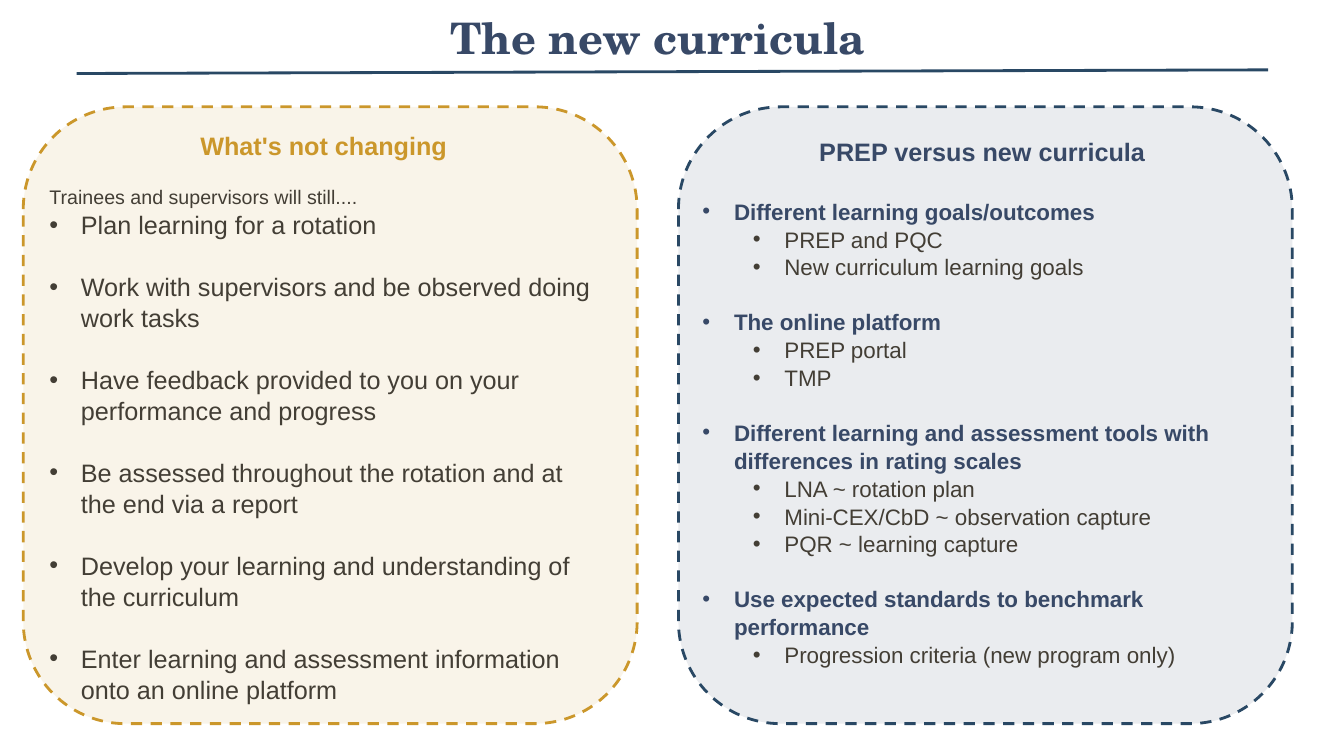
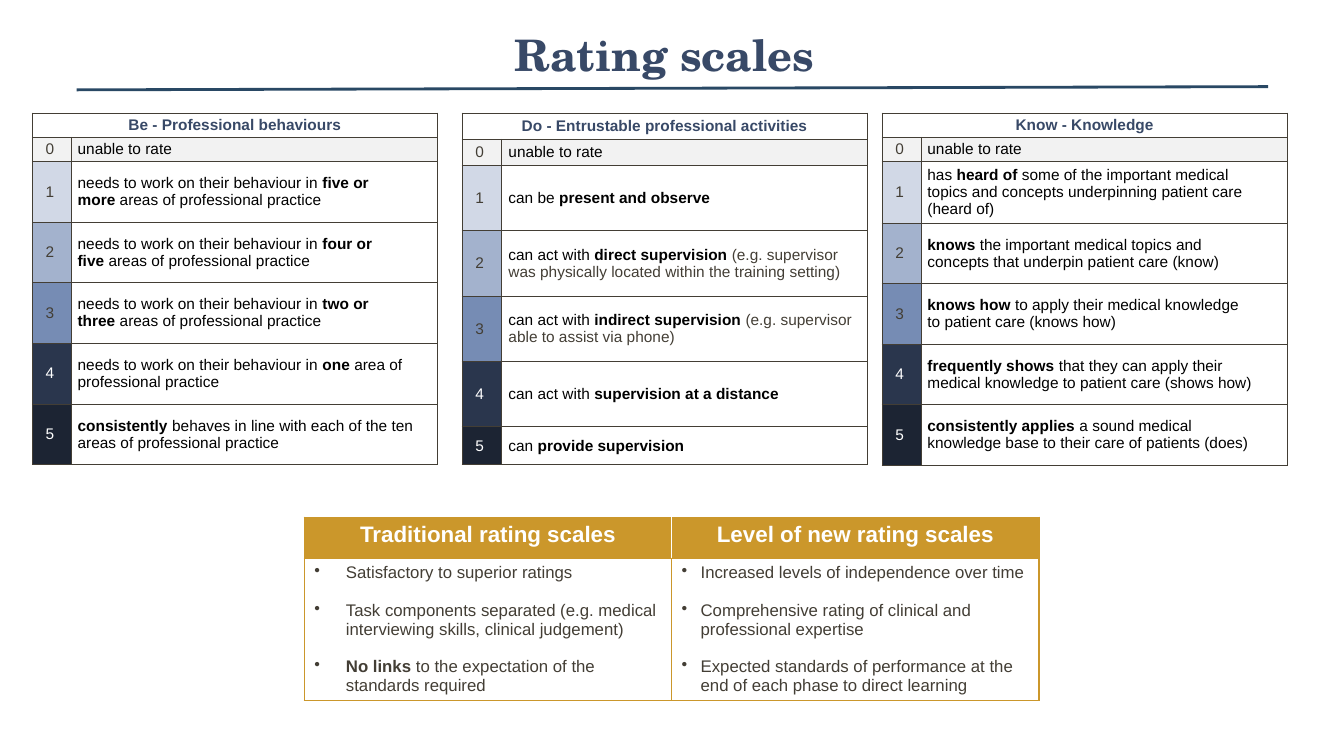
from dataclasses import dataclass

from lxml import etree
from pptx import Presentation
from pptx.dml.color import RGBColor
from pptx.enum import dml, shapes, text
from pptx.oxml import ns
from pptx.util import Pt


@dataclass(frozen=True)
class Theme:
    navy: str = "384967"
    rule: str = "294864"
    gold: str = "CB972B"
    ink: str = "433E35"
    black: str = "000000"
    white: str = "FFFFFF"
    scale: tuple = ("F2F2F2", "D1D8E6", "A3B2CD", "768CB4", "2A364D", "1C2433")
    title_font: str = "TeX Gyre Schola"
    body_font: str = "Arial"
    title: int = 31
    large: int = 18
    medium: int = 16
    intro: int = 14
    small: int = 12
    rating: int = 11


THEME = Theme()
INDENT = 22.5

CURRICULA_TITLE = dict(text="The new curricula", box=(38, 0, 864, 52.56), rule=(52.5, 49.9))
RATINGS_TITLE = dict(text="Rating scales", box=(150.5, 5, 648, 67.7), rule=(64.2, 61.9))

PANELS = [
    dict(left=16.6, fill=THEME.gold, line=THEME.gold, box=(28.1, 88.6, 416.2, 411.8), shift=10,
         content=[
             ("heading", "What's not changing"),
             ("intro", "Trainees and supervisors will still...."),
             ("point", "Plan learning for a rotation"),
             ("point", "Work with supervisors and be observed doing work tasks"),
             ("point", "Have feedback provided to you on your performance and progress"),
             ("point", "Be assessed throughout the rotation and at the end via a report"),
             ("point", "Develop your learning and understanding of the curriculum"),
             ("point", "Enter learning and assessment information onto an online platform"),
         ]),
    dict(left=484.6, fill=THEME.navy, line=THEME.rule, box=(494.6, 92.9, 419, 402.5), shift=5,
         content=[
             ("heading", "PREP versus new curricula"),
             ("topic", "Different learning goals/outcomes"),
             ("detail", "PREP and PQC"),
             ("detail", "New curriculum learning goals"),
             ("topic", "The online platform"),
             ("detail", "PREP portal"),
             ("detail", "TMP"),
             ("topic", "Different learning and assessment tools with differences in rating scales"),
             ("detail", "LNA ~ rotation plan"),
             ("detail", "Mini-CEX/CbD ~ observation capture"),
             ("detail", "PQR ~ learning capture"),
             ("topic", "Use expected standards to benchmark performance"),
             ("detail", "Progression criteria (new program only)"),
         ]),
]

STYLES = {
    "heading": dict(size=THEME.large, color=None, bold=True, gap=0, margin=None),
    "intro": dict(size=THEME.intro, color=THEME.ink, bold=False, gap=14.4, margin=None),
    "point": dict(size=THEME.large, color=THEME.ink, bold=False, gap=21.5, margin=INDENT),
    "topic": dict(size=THEME.medium, color=THEME.navy, bold=True, gap=19.1, margin=INDENT),
    "detail": dict(size=THEME.medium, color=THEME.ink, bold=False, gap=0, margin=36 + INDENT),
}

# ** marks bold, _ a space that does not break, | the start of muted text
RATINGS = [
    dict(left=23, heading="Be - Professional behaviours", inset=(4.3, 2.1),
         rows=[17.3, 17.3] + [43.3] * 5,
         levels=[
             "unable to rate",
             "needs to work on their behaviour in **five_or more_**areas of professional practice",
             "needs to work on their behaviour in **four_or five_**areas of professional practice",
             "needs to work on their behaviour in **two_or three_**areas of professional practice",
             "needs to work on their behaviour in **one **area of professional practice",
             "**consistently **behaves in line with each of_the ten areas of professional practice",
         ]),
    dict(left=330, heading="Do - Entrustable professional activities", inset=(5, 2.9),
         rows=[18.7, 18.7] + [46.7] * 4 + [26.9],
         levels=[
             "unable to rate",
             "can be **present and observe**",
             "can act with **direct supervision **|(e.g. supervisor was physically located "
             "within the training setting)",
             "can act with **indirect supervision **|(e.g. supervisor able to assist via phone)",
             "can act with **supervision at a distance**",
             "can **provide supervision**",
         ]),
    dict(left=630, heading="Know - Knowledge", inset=(4.3, 2.1),
         rows=[17.3, 17.3, 44] + [43.2] * 4,
         levels=[
             "unable to rate",
             "has **heard of **some of the important medical topics_and concepts "
             "underpinning patient care (heard of)",
             "**knows **the important medical topics and concepts_that underpin patient care (know)",
             "**knows how **to apply their medical knowledge to_patient care (knows how)",
             "**frequently shows** that they can apply their medical_knowledge "
             "to patient care (shows how)",
             "**consistently applies** a sound medical knowledge_base to their care of patients (does)",
         ]),
]

COMPARISON = [
    ("Traditional rating scales", INDENT, [
        "Satisfactory to superior ratings",
        "Task components separated (e.g. medical interviewing skills, clinical judgement)",
        "**No links **to the expectation of the standards required",
    ]),
    ("Level of new rating scales", 13.5, [
        "Increased levels of independence over time",
        "Comprehensive rating of clinical and professional expertise",
        "Expected standards of performance at the end of each phase to direct learning",
    ]),
]


def rgb(color):
    return RGBColor.from_string(color)


def place(shape, box):
    shape.left, shape.top, shape.width, shape.height = map(Pt, box)


def format_run(run, size, color, bold=False, font=THEME.body_font):
    run.font.name, run.font.size, run.font.bold = font, Pt(size), bold
    run.font.color.rgb = rgb(color)


def add_marked_text(paragraph, marked, size, color, muted=THEME.ink):
    main, _, aside = marked.replace("_", chr(160)).partition("|")
    pieces = [(piece, color, i % 2 == 1) for i, piece in enumerate(main.split("**"))]
    for piece, shade, bold in pieces + [(aside, muted, False)]:
        if piece:
            run = paragraph.add_run()
            run.text = piece
            format_run(run, size, shade, bold)


def set_bullet(paragraph, margin, hanging=INDENT):
    properties = paragraph._p.get_or_add_pPr()
    properties.set("marL", str(Pt(margin or 0)))
    properties.set("indent", str(-Pt(hanging) if margin else 0))
    bullet = etree.SubElement(properties, ns.qn("a:buChar" if margin else "a:buNone"))
    if margin:
        bullet.set("char", "•")


def next_paragraph(frame, index):
    return frame.paragraphs[0] if index == 0 else frame.add_paragraph()


def add_title(slide, title):
    shape = slide.shapes.title
    place(shape, title["box"])
    frame = shape.text_frame
    frame.text = title["text"]
    frame.vertical_anchor = text.MSO_ANCHOR.MIDDLE
    frame.auto_size = text.MSO_AUTO_SIZE.NONE
    frame.paragraphs[0].alignment = text.PP_ALIGN.CENTER
    format_run(frame.paragraphs[0].runs[0], THEME.title, THEME.navy, True, THEME.title_font)
    start, end = title["rule"]
    rule = slide.shapes.add_connector(
        shapes.MSO_CONNECTOR.STRAIGHT, Pt(54.7), Pt(start), Pt(905.8), Pt(end))
    rule.line.color.rgb, rule.line.width = rgb(THEME.rule), Pt(2)
    etree.SubElement(rule.element.spPr, ns.qn("a:effectLst"))


def add_panel(slide, panel, body):
    outline = slide.shapes.add_shape(shapes.MSO_SHAPE.ROUNDED_RECTANGLE, 0, 0, 0, 0)
    place(outline, (panel["left"], 76.3, 438.5, 440.6))
    outline.shadow.inherit = False
    outline.fill.solid()
    outline.fill.fore_color.rgb = rgb(panel["fill"])
    fill_color = outline.element.spPr.find(ns.qn("a:solidFill"))[0]
    etree.SubElement(fill_color, ns.qn("a:alpha")).set("val", "10000")
    outline.line.color.rgb, outline.line.width = rgb(panel["line"]), Pt(2)
    outline.line.dash_style = dml.MSO_LINE.DASH
    outline.element.getparent().insert(2, outline.element)

    place(body, panel["box"])
    frame = body.text_frame
    frame.auto_size = text.MSO_AUTO_SIZE.NONE
    previous = None
    for index, (kind, words) in enumerate(panel["content"]):
        style = STYLES[kind]
        paragraph = next_paragraph(frame, index)
        paragraph.text = words
        paragraph.level = 1 if kind == "detail" else 0
        set_bullet(paragraph, style["margin"])
        paragraph.line_spacing = 1.04
        paragraph.space_before = Pt(0 if previous == "intro" else style["gap"])
        paragraph.space_after = Pt(2.4 if kind == "heading" else 0)
        paragraph.alignment = text.PP_ALIGN.LEFT
        if kind == "heading":
            paragraph.alignment = text.PP_ALIGN.CENTER
            paragraph._p.get_or_add_pPr().set("marR", str(Pt(panel["shift"])))
        format_run(paragraph.runs[0], style["size"], style["color"] or panel["fill"], style["bold"])
        previous = kind


def style_cell(cell, fill, border, width, **edges):
    cell.fill.solid()
    cell.fill.fore_color.rgb = rgb(fill)
    properties = cell._tc.get_or_add_tcPr()
    for position, side in enumerate("LRTB"):
        line = etree.Element(ns.qn(f"a:ln{side}"), w=str(Pt(width)))
        solid = etree.SubElement(line, ns.qn("a:solidFill"))
        etree.SubElement(solid, ns.qn("a:srgbClr"), val=edges.get(side, border))
        properties.insert(position, line)


def add_grid(slide, left, top, columns, rows):
    frame = slide.shapes.add_table(
        len(rows), len(columns), Pt(left), Pt(top), Pt(sum(columns)), Pt(sum(rows)))
    table = frame.table
    table.first_row = table.horz_banding = False
    for column, width in zip(table.columns, columns):
        column.width = Pt(width)
    for row, height in zip(table.rows, rows):
        row.height = Pt(height)
    return table


def fill_heading(cell, words, size, color):
    cell.text_frame.text = words
    paragraph = cell.text_frame.paragraphs[0]
    paragraph.alignment = text.PP_ALIGN.CENTER
    format_run(paragraph.runs[0], size, color, True)


def add_rating_table(slide, rating):
    table = add_grid(slide, rating["left"], 80.8, (28.2, 261.4), rating["rows"])
    across, down = map(Pt, rating["inset"])
    for cell in table.iter_cells():
        style_cell(cell, THEME.white, THEME.ink, 0.61)
        cell.margin_left = cell.margin_right = across
        cell.margin_top = cell.margin_bottom = down
        cell.vertical_anchor = text.MSO_ANCHOR.MIDDLE
    table.cell(0, 0).merge(table.cell(0, 1))
    fill_heading(table.cell(0, 0), rating["heading"], THEME.rating, THEME.navy)
    for level, (words, shade) in enumerate(zip(rating["levels"], THEME.scale)):
        number, description = table.cell(level + 1, 0), table.cell(level + 1, 1)
        number.fill.fore_color.rgb = rgb(shade)
        number.margin_right = across + Pt(3)
        number.text_frame.text = str(level)
        paragraph = number.text_frame.paragraphs[0]
        paragraph.alignment = text.PP_ALIGN.CENTER
        format_run(paragraph.runs[0], THEME.rating, THEME.white if level > 3 else THEME.ink)
        if level == 0:
            description.fill.fore_color.rgb = rgb(shade)
        add_marked_text(description.text_frame.paragraphs[0], words, THEME.rating, THEME.black)


def add_comparison_table(slide):
    table = add_grid(slide, 217.4, 369.4, (262.4, 262.4), (29.3, 101.8))
    for column, (heading, margin, points) in enumerate(COMPARISON):
        header, body = table.cell(0, column), table.cell(1, column)
        inner = "R" if column == 0 else "L"
        style_cell(header, THEME.gold, THEME.gold, 1, **{inner: THEME.white})
        fill_heading(header, heading, THEME.medium, THEME.white)
        style_cell(body, THEME.white, THEME.gold, 1)
        for index, words in enumerate(points):
            paragraph = next_paragraph(body.text_frame, index)
            set_bullet(paragraph, margin, margin)
            paragraph.space_before = Pt(13.5 if index else 0)
            add_marked_text(paragraph, words, THEME.small, THEME.ink)


def main():
    presentation = Presentation()
    presentation.slide_width, presentation.slide_height = Pt(960), Pt(540)
    two_content, title_only = presentation.slide_layouts[3], presentation.slide_layouts[5]

    curricula = presentation.slides.add_slide(two_content)
    add_title(curricula, CURRICULA_TITLE)
    for panel, body in zip(PANELS, list(curricula.placeholders)[1:]):
        add_panel(curricula, panel, body)

    ratings = presentation.slides.add_slide(title_only)
    add_title(ratings, RATINGS_TITLE)
    for rating in RATINGS:
        add_rating_table(ratings, rating)
    add_comparison_table(ratings)

    presentation.save("out.pptx")


if __name__ == "__main__":
    main()
